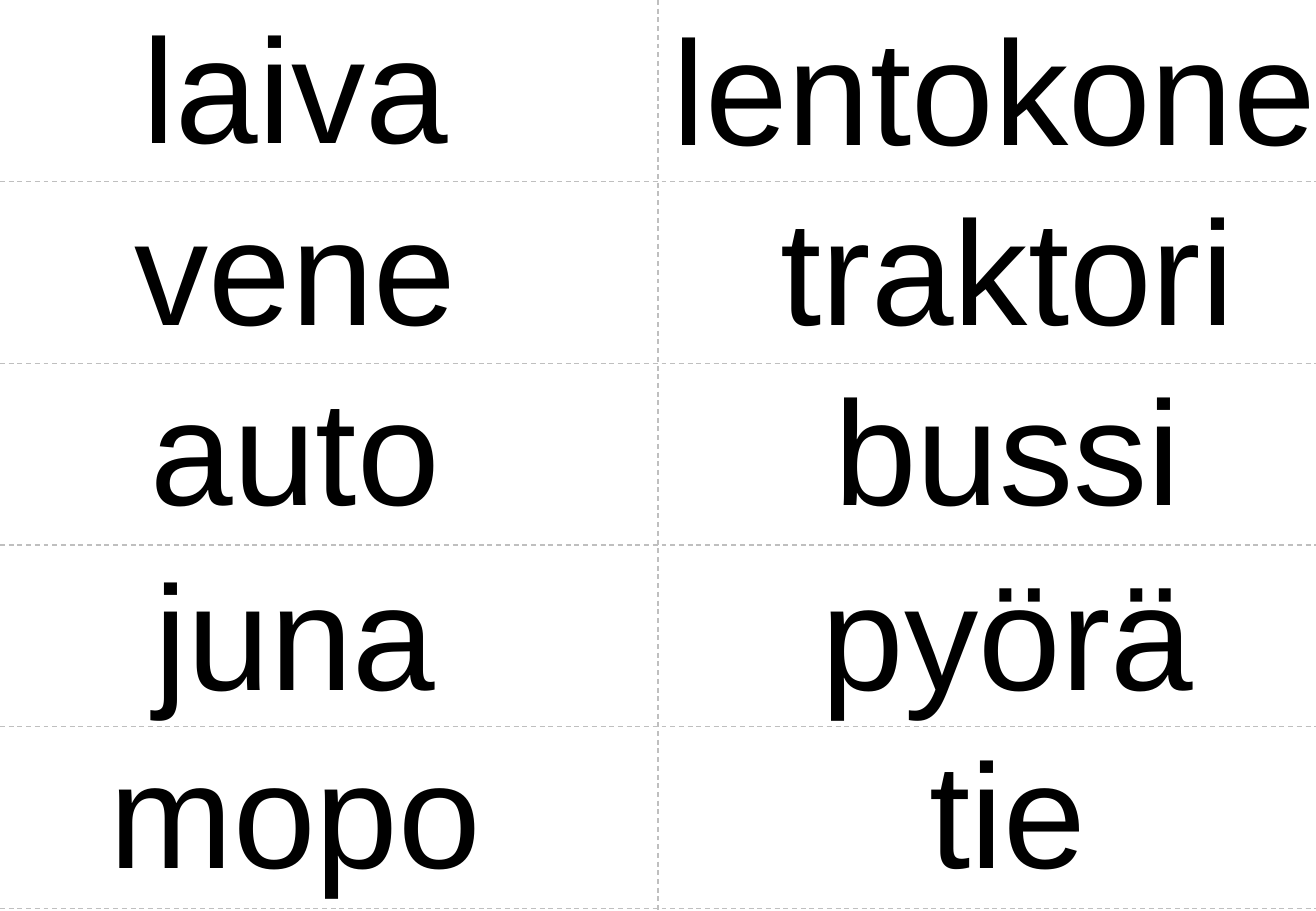
import pptx
import pptx.dml.color
import pptx.enum.dml
import pptx.enum.shapes
import pptx.enum.text
import pptx.oxml.ns
import pptx.util
from lxml import etree

Pt = pptx.util.Pt
COLOURS = {"word": "000000", "cut line": "BFBFBF"}
SLIDE_WIDTH, SLIDE_HEIGHT = 780, 540
CARD_HEIGHT = 107.7
WORD_HEIGHT = 106.6
INSET = 3.6
LEFT_CENTRE, RIGHT_CENTRE = 175, 597.2

# Top of each row, then the word and its box width in both columns
WORD_ROWS = [
    (-6.5, ("laiva", 189.4), ("lentokone", 409.7)),
    (101.5, ("vene", 198.7), ("traktori", 277.2)),
    (208.1, ("auto", 179.3), ("bussi", 213.8)),
    (317.5, ("juna", 174.2), ("pyörä", 228.2)),
    (423.4, ("mopo", 228.2), ("tie", 100.8)),
]
# The longest word sits slightly left of and below its row
NUDGES = {"lentokone": (-7.9, 1.5)}

presentation = pptx.Presentation()
presentation.slide_width = Pt(SLIDE_WIDTH)
presentation.slide_height = Pt(SLIDE_HEIGHT)
slide = presentation.slides.add_slide(presentation.slide_layouts[6])

for column, centre in enumerate((LEFT_CENTRE, RIGHT_CENTRE), start=1):
    for row in WORD_ROWS:
        word, width = row[column]
        shift_x, shift_y = NUDGES.get(word, (0, 0))
        word_box = slide.shapes.add_textbox(
            Pt(centre - width / 2 + shift_x), Pt(row[0] + shift_y), Pt(width), Pt(WORD_HEIGHT))
        frame = word_box.text_frame
        frame.word_wrap = word == "lentokone"
        frame.auto_size = pptx.enum.text.MSO_AUTO_SIZE.SHAPE_TO_FIT_TEXT
        frame.margin_left = frame.margin_right = Pt(INSET)
        frame.margin_top = frame.margin_bottom = Pt(INSET)
        paragraph = frame.paragraphs[0]
        paragraph.alignment = pptx.enum.text.PP_ALIGN.CENTER
        run = paragraph.add_run()
        run.text = word
        run.font.name = "Arial"
        run.font.size = Pt(88)
        run.font.color.rgb = pptx.dml.color.RGBColor.from_string(COLOURS["word"])

cut_lines = [(SLIDE_WIDTH / 2, 0, SLIDE_WIDTH / 2, SLIDE_HEIGHT)]
for number in range(1, len(WORD_ROWS) + 1):
    cut_lines.append((0, number * CARD_HEIGHT, SLIDE_WIDTH, number * CARD_HEIGHT))

for ends in cut_lines:
    cut_line = slide.shapes.add_connector(
        pptx.enum.shapes.MSO_CONNECTOR.STRAIGHT, *[Pt(value) for value in ends])
    cut_line.line.color.rgb = pptx.dml.color.RGBColor.from_string(COLOURS["cut line"])
    cut_line.line.width = Pt(0.75)
    cut_line.line.dash_style = pptx.enum.dml.MSO_LINE.DASH
    etree.SubElement(cut_line._element.spPr, pptx.oxml.ns.qn("a:effectLst"))

presentation.save("out.pptx")
